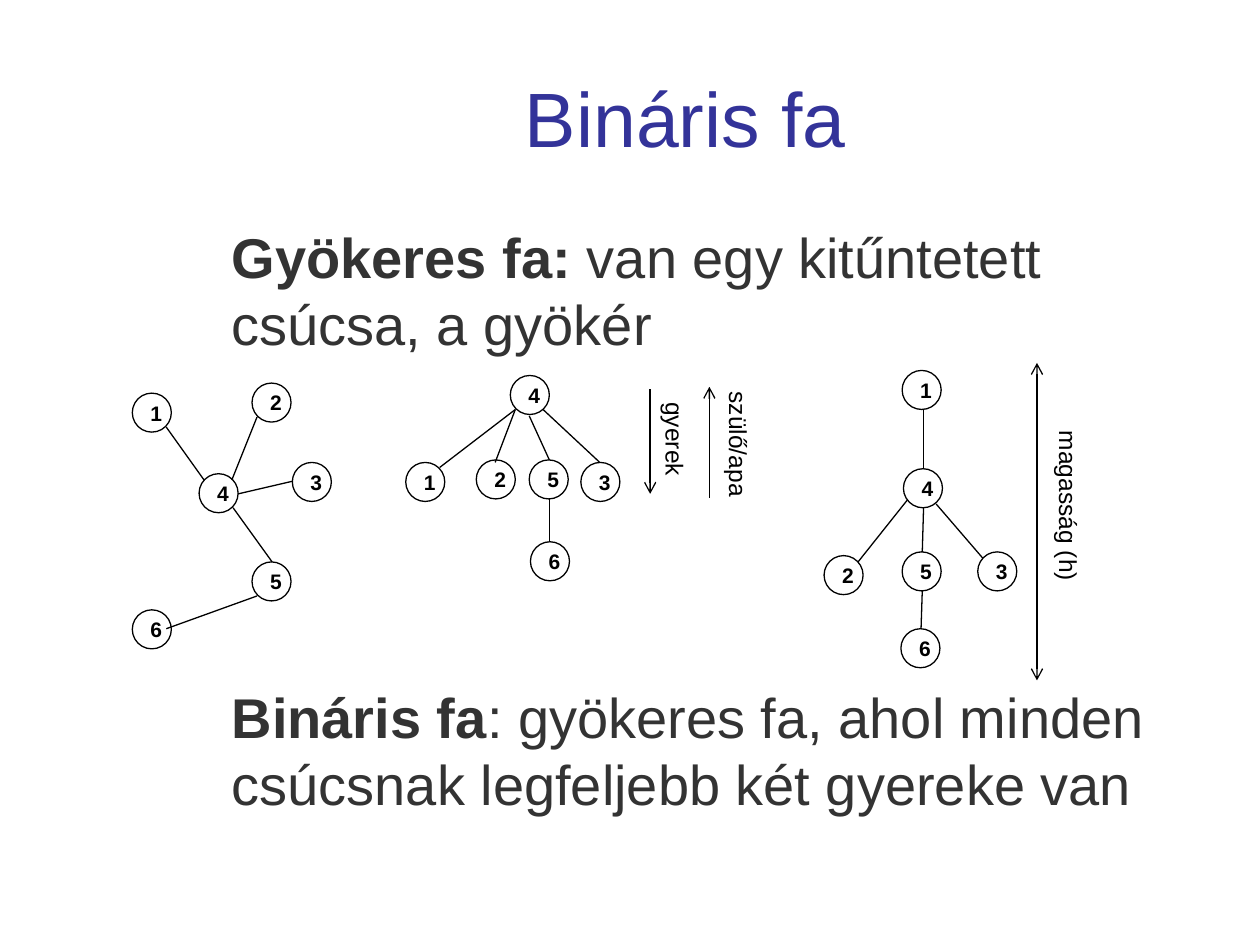
from lxml import etree
from pptx import Presentation
from pptx import util as u
from pptx.dml.color import RGBColor
from pptx.enum import shapes, text
from pptx.oxml.ns import qn

BLACK = RGBColor(0x00, 0x00, 0x00)
BLUE = RGBColor(0x33, 0x33, 0x99)
GREY = RGBColor(0x33, 0x33, 0x33)

prs = Presentation()
prs.slide_width, prs.slide_height = u.Inches(10), u.Inches(7.5)
s = prs.slides.add_slide(prs.slide_layouts[6])
COL = prs.slide_width / 100
ROW = prs.slide_height / 75
NODE = 3.1


def grid(x, y):
    return round(x * COL), round(y * ROW)


def write(p, words, size=12, color=BLACK, bold=False, align=None):
    p.alignment = align
    r = p.add_run()
    r.text = words
    r.font.name, r.font.size = "Arial", u.Pt(size)
    r.font.bold, r.font.color.rgb = bold, color


tf = s.shapes.add_textbox(*grid(13.8, 3), *grid(81.2, 12.5)).text_frame
tf.word_wrap = True
tf.vertical_anchor = text.MSO_ANCHOR.MIDDLE
write(tf.paragraphs[0], "Bináris fa", size=44, color=BLUE, align=text.PP_ALIGN.CENTER)

definitions = [
    ("Gyökeres fa: ", "van egy kitűntetett csúcsa, a gyökér", 0),
    ("Bináris fa", ": gyökeres fa, ahol minden csúcsnak legfeljebb két gyereke van", 186),
]
tf = s.shapes.add_textbox(*grid(17.4, 17.2), *grid(81.2, 47.6)).text_frame
tf.word_wrap = True
for i, (term, meaning, gap) in enumerate(definitions):
    p = tf.add_paragraph() if i else tf.paragraphs[0]
    p.line_spacing = u.Pt(38.3)
    p.space_before = u.Pt(gap)
    write(p, term, size=32, color=GREY, bold=True)
    write(p, meaning, size=32, color=GREY)

trees = [
    {1: (10.5, 31.2), 2: (20, 30.4), 4: (15.8, 37.6),
     3: (23.2, 36.7), 5: (20, 44.6), 6: (10.5, 48.4)},
    {1: (32.2, 36.7), 2: (37.8, 36.5), 4: (40.5, 29.8),
     3: (46.1, 36.7), 5: (42, 36.5), 6: (42.1, 43)},
    {1: (71.6, 29.4), 2: (65.4, 44.1), 4: (71.7, 37.2),
     3: (77.6, 43.8), 5: (71.6, 43.8), 6: (71.5, 49.9)},
]
for tree in trees:
    for number, place in tree.items():
        sp = s.shapes.add_shape(shapes.MSO_SHAPE.OVAL, *grid(*place), *grid(NODE, NODE))
        sp.shadow.inherit = False
        sp.fill.background()
        sp.line.color.rgb, sp.line.width = BLACK, u.Pt(0.75)
        sp.text_frame.word_wrap = True
        sp.text_frame.vertical_anchor = text.MSO_ANCHOR.MIDDLE
        write(sp.text_frame.paragraphs[0], str(number), bold=True, align=text.PP_ALIGN.CENTER)

edges = [
    (13.2, 33.9, 16.2, 38.1), (18.4, 38.1, 20.4, 33.1), (18.9, 39.2, 23.2, 38.2),
    (18.5, 40.3, 21.6, 44.6), (20.4, 47.3, 13.2, 49.9),
    (34.9, 37.1, 40.9, 32.5), (40.9, 32.5, 39.3, 36.7), (43.1, 32.5, 47.6, 36.7),
    (42, 33, 43.6, 36.5), (43.6, 39.6, 43.6, 43),
    (73.3, 32.5, 73.3, 37.2), (68.1, 44.6, 72, 39.7), (74.3, 40, 78, 44.3),
    (73.3, 40.3, 73.2, 43.8), (73.2, 46.9, 73.1, 49.9),
]
arrows = [
    (51.6, 30.9, 51.6, 39.2, ["tailEnd"]),
    (56.3, 39.5, 56.3, 30.7, ["tailEnd"]),
    (82.3, 28.8, 82.3, 54, ["headEnd", "tailEnd"]),
]
for x1, y1, x2, y2, ends in [(*edge, []) for edge in edges] + arrows:
    line = s.shapes.add_connector(shapes.MSO_CONNECTOR.STRAIGHT, *grid(x1, y1), *grid(x2, y2))
    line.line.color.rgb, line.line.width = BLACK, u.Pt(0.75)
    for end in ends:
        etree.SubElement(line.line._get_or_add_ln(), qn(f"a:{end}"), type="arrow")
    etree.SubElement(line._element.spPr, qn("a:effectLst"))

labels = [
    ("gyerek", 49.6, 33.2, 7.9),
    ("szülő/apa", 53.4, 33.6, 10.4),
    ("magasság (h)", 77.8, 38.5, 14),
]
for words, x, y, width in labels:
    sp = s.shapes.add_textbox(*grid(x, y), *grid(width, 3.4))
    sp.rotation = 90
    sp.text_frame.word_wrap = False
    sp.text_frame.auto_size = text.MSO_AUTO_SIZE.SHAPE_TO_FIT_TEXT
    write(sp.text_frame.paragraphs[0], words, size=14)

prs.save("out.pptx")
